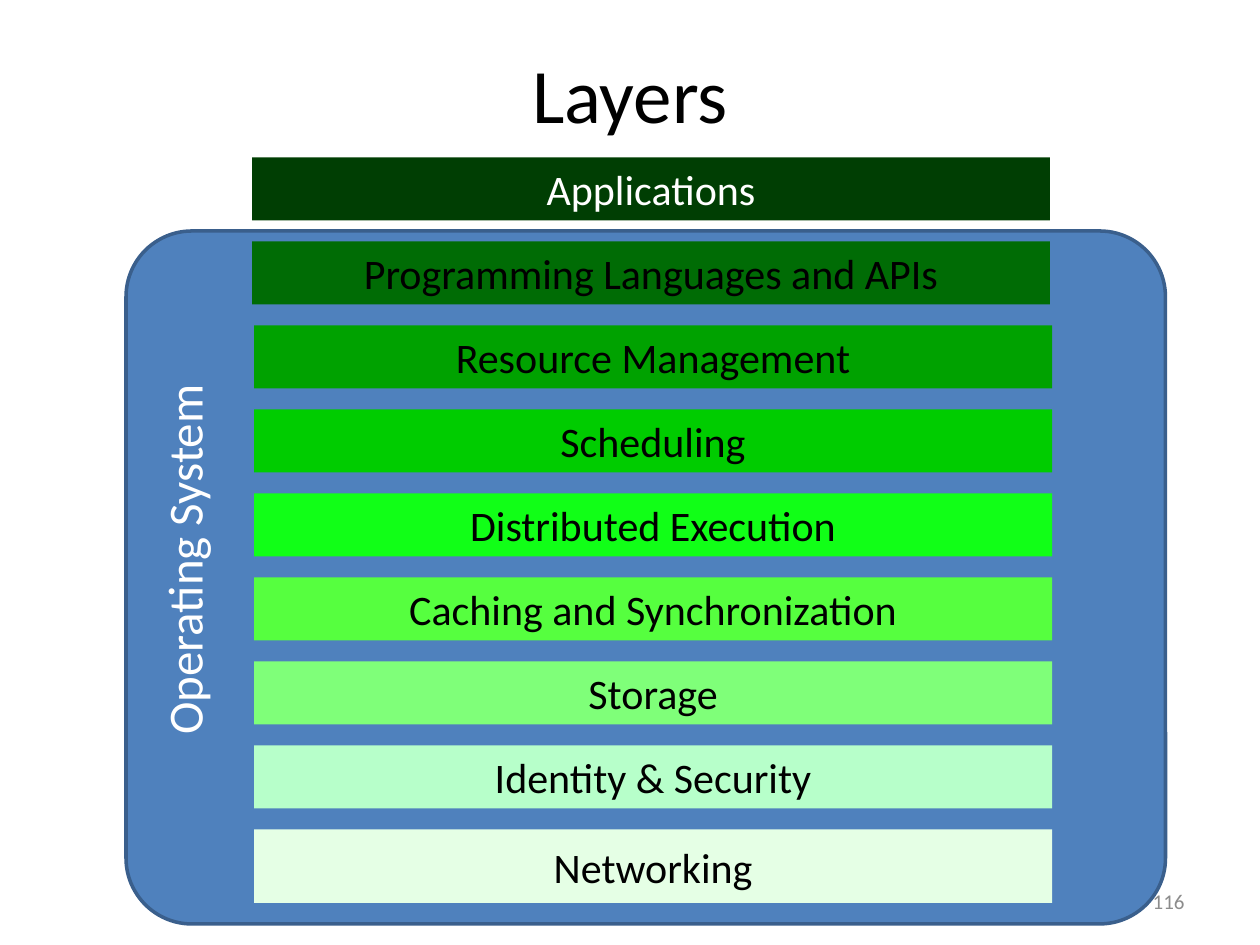
from pptx import Presentation
from pptx.dml.color import RGBColor
from pptx.enum.shapes import MSO_SHAPE
from pptx.enum.text import MSO_ANCHOR, MSO_AUTO_SIZE, PP_ALIGN
from pptx.util import Emu, Pt

PX_PER_INCH = 120
FONT = "Calibri"
LAYERS = [
    ("Applications", "003E03", "FFFFFF"),
    ("Programming Languages and APIs", "006C05", "000000"),
    ("Resource Management", "00A200", "000000"),
    ("Scheduling", "00CC00", "000000"),
    ("Distributed Execution", "11FF17", "000000"),
    ("Caching and Synchronization", "56FF3F", "000000"),
    ("Storage", "7FFF79", "000000"),
    ("Identity & Security", "B7FFCA", "000000"),
    ("Networking", "E5FFE5", "000000"),
]
LAYER_TOP, LAYER_STEP, LAYER_WIDTH, LAYER_HEIGHT = 150, 80, 760, 60


def px(length):
    return Emu(length * 914400 // PX_PER_INCH)


def color(value):
    return RGBColor.from_string(value)


def write(shape, text, size, font_color, align, anchor=MSO_ANCHOR.MIDDLE):
    frame = shape.text_frame
    frame.vertical_anchor = anchor
    para = frame.paragraphs[0]
    para.alignment = align
    span = para.add_run()
    span.text = text
    span.font.name = FONT
    span.font.size = Pt(size)
    span.font.color.rgb = color(font_color)


def add_block(page, kind, area, fill):
    block = page.shapes.add_shape(kind, *map(px, area))
    block.shadow.inherit = False
    block.fill.solid()
    block.fill.fore_color.rgb = color(fill)
    block.line.fill.background()
    return block


def add_title(page, text):
    title = page.shapes.title
    title.left, title.top, title.width, title.height = map(px, (60, 36, 1080, 104))
    write(title, text, 44, "000000", PP_ALIGN.CENTER)


def add_system_panel(page):
    panel = add_block(page, MSO_SHAPE.ROUNDED_RECTANGLE, (120, 220, 990, 660), "4F81BD")
    panel.adjustments[0] = 0.095
    panel.line.color.rgb = color("3A5F8C")
    panel.line.width = Pt(2)


def add_page_number(page, number):
    box = page.shapes.add_textbox(*map(px, (860, 834, 280, 48)))
    box.text_frame.word_wrap = True
    write(box, number, 12, "8C8C8C", PP_ALIGN.RIGHT)


def add_layers(page):
    for index, (name, fill, font_color) in enumerate(LAYERS):
        left = 240 if index < 2 else 242
        height = LAYER_HEIGHT + (10 if name == "Networking" else 0)
        area = (left, LAYER_TOP + index * LAYER_STEP, LAYER_WIDTH, height)
        layer = add_block(page, MSO_SHAPE.RECTANGLE, area, fill)
        write(layer, name, 24, font_color, PP_ALIGN.CENTER)


def add_system_label(page, text):
    box = page.shapes.add_textbox(*map(px, (-6, 497, 361, 68)))
    box.rotation = 270
    box.text_frame.word_wrap = False
    box.text_frame.auto_size = MSO_AUTO_SIZE.SHAPE_TO_FIT_TEXT
    write(box, text, 28, "FFFFFF", PP_ALIGN.LEFT, MSO_ANCHOR.TOP)


def main():
    deck = Presentation()
    deck.slide_width, deck.slide_height = px(1200), px(900)
    page = deck.slides.add_slide(deck.slide_layouts[5])
    add_title(page, "Layers")
    add_system_panel(page)
    add_page_number(page, "116")
    add_layers(page)
    add_system_label(page, "Operating System")
    deck.save("out.pptx")


if __name__ == "__main__":
    main()
